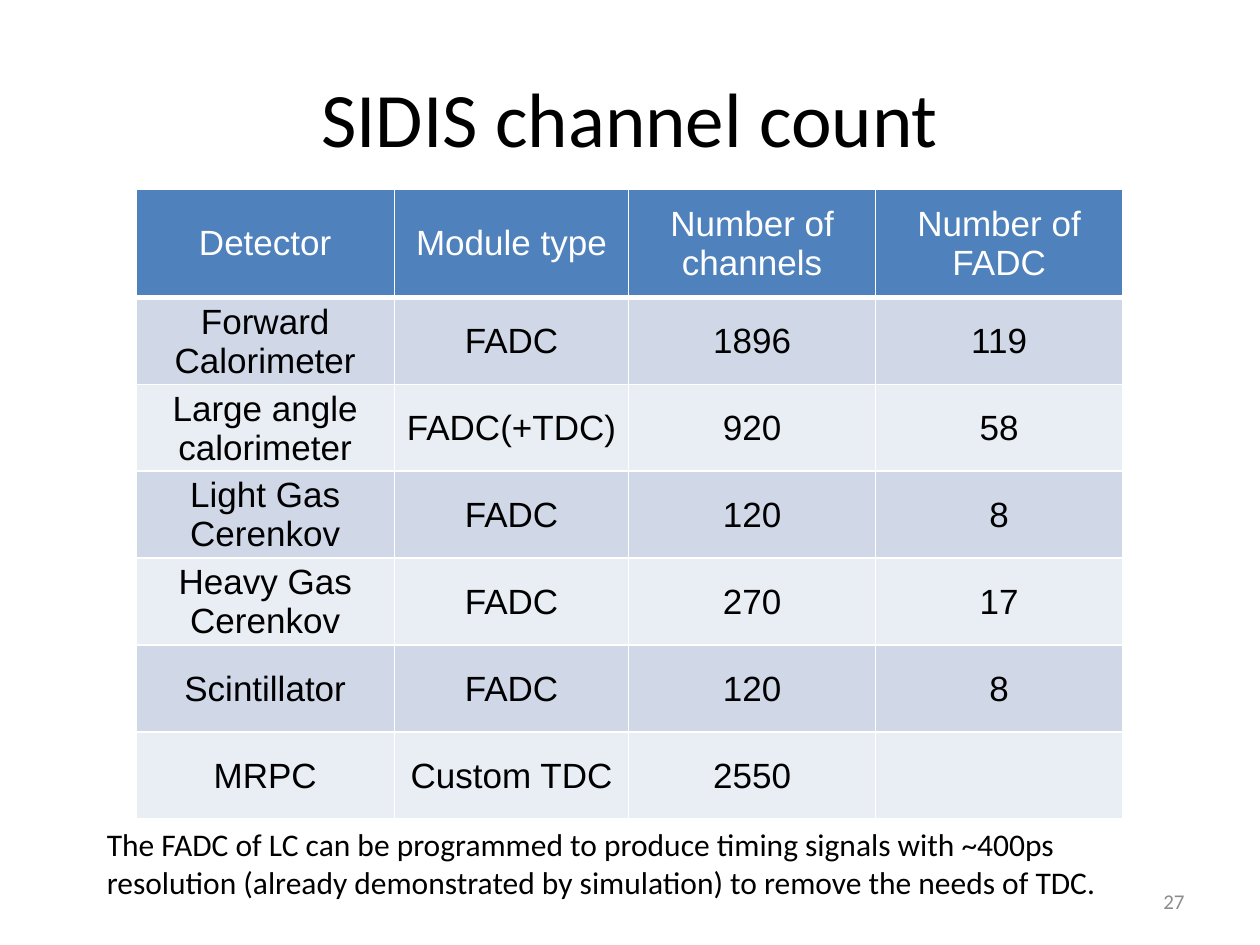
from dataclasses import dataclass

from lxml import etree
from pptx import Presentation
from pptx.dml.color import RGBColor
from pptx.enum.text import MSO_ANCHOR, PP_ALIGN
from pptx.oxml.ns import qn
from pptx.util import Inches, Pt

LEFT, CENTER, RIGHT = PP_ALIGN.LEFT, PP_ALIGN.CENTER, PP_ALIGN.RIGHT
TOP, MIDDLE = MSO_ANCHOR.TOP, MSO_ANCHOR.MIDDLE

SLIDE_WIDTH, SLIDE_HEIGHT = Inches(10), Inches(7.5)
GRID_COLUMNS, GRID_ROWS = 100, 75
BLANK_LAYOUT = 6


@dataclass(frozen=True)
class Theme:
    text_font: str = "Calibri"
    table_font: str = "Arial"
    title_size: int = 44
    table_size: int = 20
    note_size: int = 18
    number_size: int = 12
    text: str = "000000"
    number: str = "8C8C8C"
    header_text: str = "FFFFFF"
    header_fill: str = "4F81BD"
    band_fills: tuple = ("D0D8E8", "E9EDF4")
    border: str = "FFFFFF"
    border_width: int = 1
    header_rule_width: int = 3


THEME = Theme()


@dataclass(frozen=True)
class Box:
    """An area in grid columns and rows."""
    left: float
    top: float
    width: float
    height: float

    def lengths(self):
        return (columns(self.left), rows(self.top),
                columns(self.width), rows(self.height))


TITLE_BOX = Box(5, 3, 90, 12.5)
TABLE_BOX = Box(10.8, 15, 78.3, 50)
NUMBER_BOX = Box(71.7, 69.5, 23.3, 4)
NOTE_BOX = Box(7.5, 65, 86.7, 7.1)

COLUMN_WIDTHS = (20.5, 18.6, 19.6, 19.6)
HEADER_HEIGHT = 8.6
CHANNEL_TABLE = (
    ("Detector", "Module type", "Number of channels", "Number of FADC"),
    ("Forward Calorimeter", "FADC", "1896", "119"),
    ("Large angle calorimeter", "FADC(+TDC)", "920", "58"),
    ("Light Gas Cerenkov", "FADC", "120", "8"),
    ("Heavy Gas Cerenkov", "FADC", "270", "17"),
    ("Scintillator", "FADC", "120", "8"),
    ("MRPC", "Custom TDC", "2550", ""),
)
NOTE = ("The FADC of LC can be programmed to produce timing signals with "
        "~400ps resolution (already demonstrated by simulation) to remove "
        "the needs of TDC.")


def columns(count):
    return round(SLIDE_WIDTH * count / GRID_COLUMNS)


def rows(count):
    return round(SLIDE_HEIGHT * count / GRID_ROWS)


def style_paragraph(paragraph, font_name, size, color, alignment):
    paragraph.alignment = alignment
    font = paragraph.font
    font.name, font.size, font.bold = font_name, Pt(size), False
    font.color.rgb = RGBColor.from_string(color)


def add_text(slide, box, text, size, color, alignment=LEFT, anchor=TOP):
    frame = slide.shapes.add_textbox(*box.lengths()).text_frame
    frame.word_wrap = True
    frame.vertical_anchor = anchor
    frame.text = text
    style_paragraph(frame.paragraphs[0], THEME.text_font, size, color, alignment)


def add_cell_borders(cell, bottom_width, top_width):
    """Add the border lines; they must precede the fill in the cell XML."""
    properties = cell._tc.get_or_add_tcPr()
    widths = {"a:lnL": THEME.border_width, "a:lnR": THEME.border_width,
              "a:lnT": top_width, "a:lnB": bottom_width}
    for tag, width in widths.items():
        line = etree.SubElement(properties, qn(tag), w=str(Pt(width)))
        fill = etree.SubElement(line, qn("a:solidFill"))
        etree.SubElement(fill, qn("a:srgbClr"), val=THEME.border)


def fill_cell(cell, text, row_index):
    is_header = row_index == 0
    rule, thin = THEME.header_rule_width, THEME.border_width
    add_cell_borders(cell, rule if is_header else thin,
                     rule if row_index == 1 else thin)
    band = THEME.band_fills[(row_index - 1) % len(THEME.band_fills)]
    cell.fill.solid()
    cell.fill.fore_color.rgb = RGBColor.from_string(
        THEME.header_fill if is_header else band)
    cell.margin_left = cell.margin_right = cell.margin_top = Inches(0.01)
    cell.margin_bottom = 0
    cell.vertical_anchor = MIDDLE
    cell.text = text
    style_paragraph(cell.text_frame.paragraphs[0], THEME.table_font,
                    THEME.table_size,
                    THEME.header_text if is_header else THEME.text, CENTER)


def add_channel_table(slide, box):
    table = slide.shapes.add_table(
        len(CHANNEL_TABLE), len(COLUMN_WIDTHS), *box.lengths()).table
    for column, width in zip(table.columns, COLUMN_WIDTHS):
        column.width = columns(box.width * width / sum(COLUMN_WIDTHS))
    body_height = (box.height - HEADER_HEIGHT) / (len(CHANNEL_TABLE) - 1)
    for row_index, texts in enumerate(CHANNEL_TABLE):
        table.rows[row_index].height = rows(
            body_height if row_index else HEADER_HEIGHT)
        for column_index, text in enumerate(texts):
            fill_cell(table.cell(row_index, column_index), text, row_index)


def build_channel_slide(presentation):
    slide = presentation.slides.add_slide(
        presentation.slide_layouts[BLANK_LAYOUT])
    add_text(slide, TITLE_BOX, "SIDIS channel count",
             THEME.title_size, THEME.text, CENTER, MIDDLE)
    add_channel_table(slide, TABLE_BOX)
    add_text(slide, NUMBER_BOX, "27",
             THEME.number_size, THEME.number, RIGHT, MIDDLE)
    add_text(slide, NOTE_BOX, NOTE, THEME.note_size, THEME.text)


def main():
    presentation = Presentation()
    presentation.slide_width = SLIDE_WIDTH
    presentation.slide_height = SLIDE_HEIGHT
    build_channel_slide(presentation)
    presentation.save("out.pptx")


if __name__ == "__main__":
    main()
